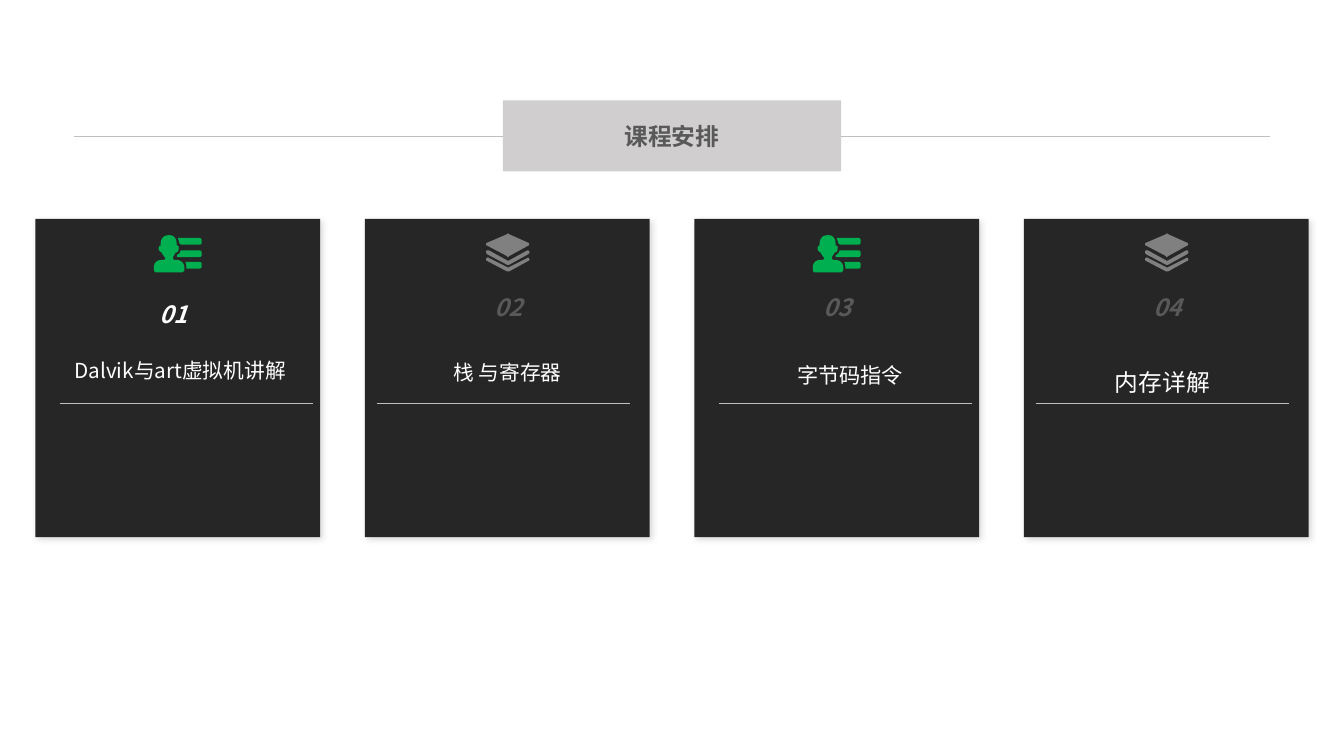
from dataclasses import dataclass

from lxml import etree
from pptx import Presentation
from pptx.dml.color import RGBColor
from pptx.enum.shapes import MSO_CONNECTOR, MSO_SHAPE
from pptx.enum.text import MSO_ANCHOR, MSO_AUTO_SIZE, PP_ALIGN
from pptx.oxml.ns import qn
from pptx.util import Pt

RECTANGLE = MSO_SHAPE.RECTANGLE
STRAIGHT = MSO_CONNECTOR.STRAIGHT
MIDDLE = MSO_ANCHOR.MIDDLE
CENTER = PP_ALIGN.CENTER
FIXED = MSO_AUTO_SIZE.NONE


@dataclass(frozen=True)
class Theme:
    banner: str = "D0CECE"
    card: str = "262626"
    rule: str = "BFBFBF"
    muted: str = "595959"
    white: str = "FFFFFF"
    green: str = "00B050"
    gray: str = "808080"
    shadow: str = "000000"
    font: str = "Noto Sans CJK SC"
    latin: str = "Calibri"
    large: float = 17.9
    medium: float = 16
    small: float = 15.6


THEME = Theme()
WIDTH, HEIGHT = 1012.3, 569.5
CARD_WIDTH, CARD_HEIGHT, CARD_TOP, CARD_MARGIN = 214.6, 239.8, 164.9, 26.6
ICON_UNIT = 0.72
CURVE_STEPS = 6

# Icon outlines: M = move, L = line, C = cubic curve, Z = close
PERSON = """
M 33 28 L 48 28 C 49 28 50 29 50 30 L 50 33 C 50 34 49 35 48 35 L 34 35 L 34 34
C 34 32 34 30 33 28 Z
M 28 16 L 48 16 C 49 16 50 17 50 18 L 50 21 C 50 22 49 23 48 23 L 24 23 L 24 21
C 24 21 25 21 25 20 C 26 20 28 18 28 16 Z
M 25 3 L 48 3 C 49 3 50 4 50 5 L 50 8 C 50 9 49 10 48 10 L 28 10
C 28 9 27 9 27 9 C 26 6 26 5 25 3 Z
M 16 0 C 23 0 24 6 24 11 L 25 11 C 26 11 26 12 26 14 C 26 16 25 18 24 18 L 23 18
C 22 20 21 21 20 23 L 20 24 C 20 25 21 26 22 26 L 24 26 C 28 26 32 29 32 34 L 32 36
C 32 37 31 39 29 39 L 2 39 C 1 39 0 37 0 36 L 0 34 C 0 29 3 26 8 26 L 10 26
C 11 26 12 25 12 24 C 12 23 12 23 11 23 C 10 21 9 20 8 18
C 7 18 5 16 5 14 C 5 12 6 11 7 11 C 7 6 8 0 16 0 Z
"""
LAYERS = """
M 1 26 C 2 25 2 25 3 26 L 23 36 L 43 26 C 44 25 45 26 45 27 C 46 27 45 29 44 29
L 24 40 L 22 40 L 1 29 C 0 29 0 27 0 27 C 0 26 1 26 1 26 Z
M 1 18 L 3 18 L 23 29 L 43 18 C 44 18 45 18 45 19 C 46 20 45 21 44 22
L 24 33 L 22 33 L 1 22 C 0 21 0 20 0 19 C 0 18 1 18 1 18 Z
M 22 1 C 22 0 23 0 24 1 L 44 10 C 45 10 45 11 45 12 C 45 12 45 13 44 13
L 24 24 C 23 25 23 25 23 25 C 22 25 22 25 22 24 L 1 13 C 0 13 0 12 0 12
C 0 11 0 10 1 10 Z
"""


@dataclass(frozen=True)
class Icon:
    outline: str
    color: str
    left: float
    top: float
    rule_left: float


STUDENT = Icon(PERSON, THEME.green, 89.3, 12.2, 18.3)
STACK = Icon(LAYERS, THEME.gray, 91.4, 10.8, 9)


@dataclass(frozen=True)
class Lesson:
    number: str
    topic: str
    icon: Icon
    number_at: tuple
    topic_at: tuple  # left, top, width, height inside the card
    size: float
    number_color: str = THEME.muted
    font: str = THEME.font


LESSONS = [
    Lesson("01", "Dalvik与art虚拟机讲解", STUDENT, (30.2, 53.3),
           (8.6, 97.9, 200.9, 31.7), THEME.small, number_color=THEME.white),
    Lesson("02", "栈 与寄存器", STACK, (33.8, 48.2),
           (7.2, 99.4, 200.9, 31.7), THEME.small),
    Lesson("03", "字节码指令", STUDENT, (33.8, 48.2),
           (2.9, 101.5, 229, 31.7), THEME.medium, font=THEME.latin),
    Lesson("04", "内存详解", STACK, (33.8, 48.2),
           (-10.1, 91.4, 229, 63.4), THEME.large),
]


def paint(shape, color):
    shape.fill.solid()
    shape.fill.fore_color.rgb = RGBColor.from_string(color)
    shape.line.fill.background()
    shape.shadow.inherit = False


def write(shape, text, size, color, bold=False, italic=False, font=THEME.font):
    frame = shape.text_frame
    frame.word_wrap = True
    frame.auto_size = FIXED
    frame.vertical_anchor = MIDDLE
    frame.margin_left = frame.margin_right = Pt(4.5)
    frame.margin_top = frame.margin_bottom = Pt(2.2)
    paragraph = frame.paragraphs[0]
    paragraph.alignment = CENTER
    run = paragraph.add_run()
    run.text = text
    run.font.name = font
    run.font.size = Pt(size)
    run.font.bold = bold
    run.font.italic = italic
    run.font.color.rgb = RGBColor.from_string(color)
    east_asian = etree.SubElement(run.font._element, qn("a:ea"))
    east_asian.set("typeface", THEME.font)


def add_rule(slide, left, top, width):
    rule = slide.shapes.add_connector(STRAIGHT, Pt(left), Pt(top), Pt(left + width), Pt(top))
    rule.line.color.rgb = RGBColor.from_string(THEME.rule)
    rule.line.width = Pt(0.25)
    etree.SubElement(rule._element.spPr, qn("a:effectLst"))


def add_card_shadow(card):
    effects = card._element.spPr.find(qn("a:effectLst"))
    shadow = etree.SubElement(effects, qn("a:outerShdw"), blurRad=str(Pt(5)),
                              dist=str(Pt(2)), dir=str(45 * 60000))
    color = etree.SubElement(shadow, qn("a:srgbClr"), val=THEME.shadow)
    etree.SubElement(color, qn("a:alpha"), val="15000")


def curve_points(start, first, second, end):
    for step in range(1, CURVE_STEPS + 1):
        t = step / CURVE_STEPS
        u = 1 - t
        yield tuple(u**3 * a + 3 * u * u * t * b + 3 * u * t * t * c + t**3 * d
                    for a, b, c, d in zip(start, first, second, end))


def outline_contours(outline):
    for contour in outline.split("Z"):
        points = []
        tokens = contour.split()
        while tokens:
            command = tokens.pop(0)
            count = 3 if command == "C" else 1
            pairs = [(int(tokens.pop(0)), int(tokens.pop(0))) for _ in range(count)]
            points += curve_points(points[-1], *pairs) if command == "C" else pairs
        if points:
            yield points


def add_icon(slide, icon, left, top):
    builder = None
    for contour in outline_contours(icon.outline):
        points = [(Pt(left + x * ICON_UNIT), Pt(top + y * ICON_UNIT)) for x, y in contour]
        if builder is None:
            builder = slide.shapes.build_freeform(*points[0])
        else:
            builder.move_to(*points[0])
        builder.add_line_segments(points[1:], close=True)
    paint(builder.convert_to_shape(), icon.color)


def add_heading(slide, left, top, width, height):
    # Long rule with the title banner centred over it
    add_rule(slide, left, top + height / 2, width)
    banner_width = 254.9
    title = slide.shapes.title
    title.left, title.top = Pt(left + (width - banner_width) / 2), Pt(top)
    title.width, title.height = Pt(banner_width), Pt(height)
    paint(title, THEME.banner)
    write(title, "课程安排", THEME.large, THEME.muted, bold=True)
    slide.shapes._spTree.append(title._element)


def add_lesson(slide, lesson, left, top, width, height):
    # Card, icon and rule
    card = slide.shapes.add_shape(RECTANGLE, Pt(left), Pt(top), Pt(width), Pt(height))
    paint(card, THEME.card)
    add_card_shadow(card)
    add_icon(slide, lesson.icon, left + lesson.icon.left, top + lesson.icon.top)
    add_rule(slide, left + lesson.icon.rule_left, top + 139, 190.9)
    # Number and topic
    x, y = lesson.number_at
    number = slide.shapes.add_textbox(Pt(left + x), Pt(top + y), Pt(148.3), Pt(36.7))
    write(number, lesson.number, THEME.large, lesson.number_color, bold=True, italic=True)
    x, y, topic_width, topic_height = lesson.topic_at
    topic = slide.shapes.add_textbox(Pt(left + x), Pt(top + y), Pt(topic_width), Pt(topic_height))
    write(topic, lesson.topic, lesson.size, THEME.white, font=lesson.font)


def main():
    deck = Presentation()
    deck.slide_width, deck.slide_height = Pt(WIDTH), Pt(HEIGHT)
    slide = deck.slides.add_slide(deck.slide_layouts[5])
    add_heading(slide, 55.8, 75.6, WIDTH - 2 * 55.8, 53.6)
    step = (WIDTH - 2 * CARD_MARGIN - CARD_WIDTH) / (len(LESSONS) - 1)
    for index, lesson in enumerate(LESSONS):
        add_lesson(slide, lesson, CARD_MARGIN + index * step, CARD_TOP, CARD_WIDTH, CARD_HEIGHT)
    deck.save("out.pptx")


if __name__ == "__main__":
    main()
